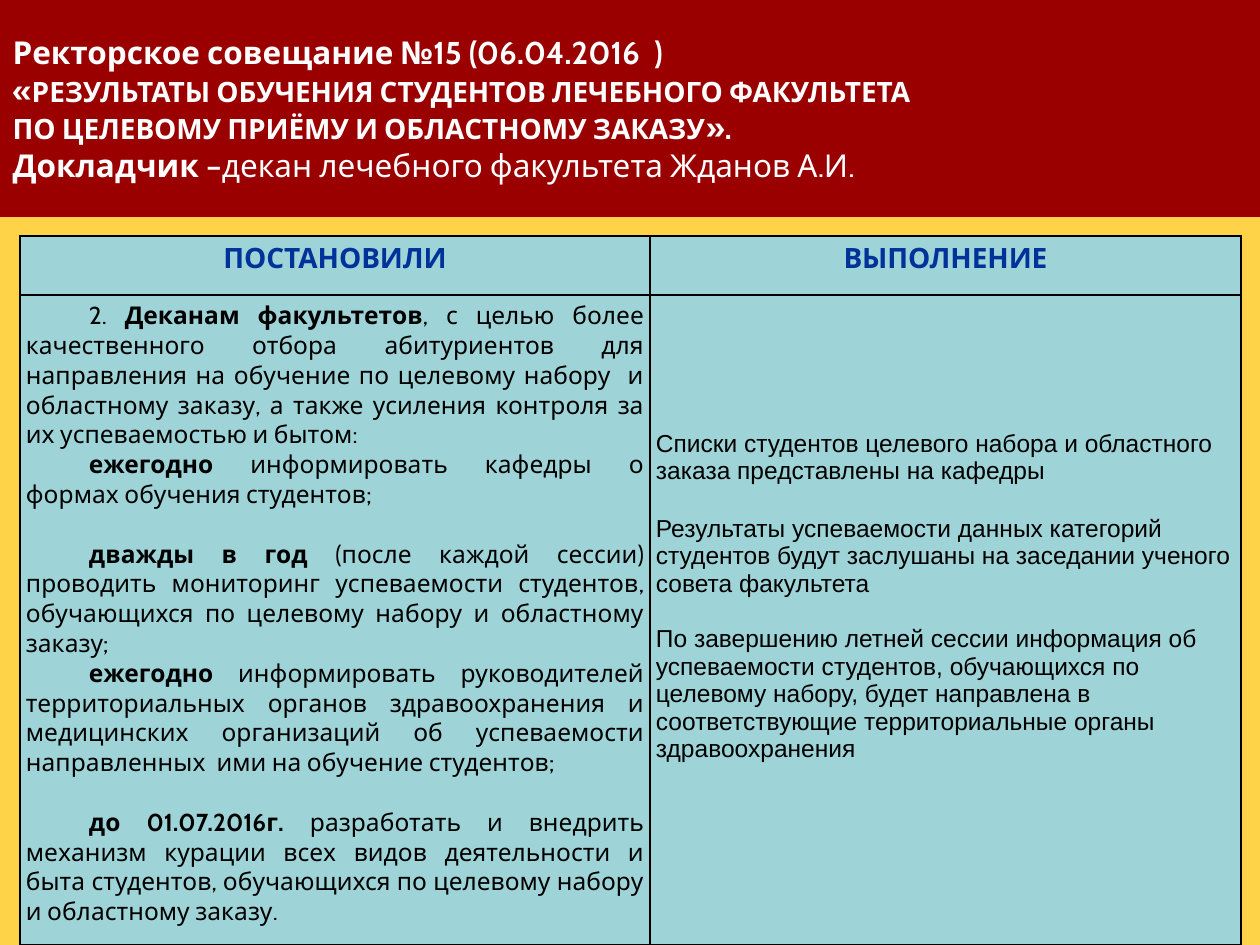
import pptx
import pptx.util
import pptx.dml.color
import pptx.enum.text
from lxml import etree

Pt = pptx.util.Pt
ALIGN = pptx.enum.text.PP_ALIGN
ANCHOR = pptx.enum.text.MSO_ANCHOR
NS = "{http://schemas.openxmlformats.org/drawingml/2006/main}"
HUES = {"back": "FFD347", "band": "9A0000", "cell": "9ED3D7",
        "head": "003399", "ink": "000000", "white": "FFFFFF"}

TITLE = [
    [("Ректорское совещание №15 (06.04.2016  )", 18, True)],
    [("«", 18, True),
     ("РЕЗУЛЬТАТЫ ОБУЧЕНИЯ СТУДЕНТОВ ЛЕЧЕБНОГО ФАКУЛЬТЕТА", 16, True)],
    [("ПО ЦЕЛЕВОМУ ПРИЁМУ И ОБЛАСТНОМУ ЗАКАЗУ", 16, True), ("».", 18, True)],
    [("Докладчик –", 18, True),
     ("декан лечебного факультета Жданов А.И.", 18, False)],
]
HEADS = ["ПОСТАНОВИЛИ", "ВЫПОЛНЕНИЕ"]
# Each task: space before in points, then (text, bold) runs
TASKS = [
    (0, [("2. ", False), ("Деканам факультетов", True),
         (", с целью более качественного отбора абитуриентов для направления "
          "на обучение по целевому набору  и областному заказу, а также "
          "усиления контроля за их успеваемостью и бытом:", False)]),
    (0, [("ежегодно ", True),
         ("информировать кафедры о формах обучения студентов;", False)]),
    (17, [("дважды в год", True),
          (" (после каждой сессии) проводить мониторинг успеваемости "
           "студентов, обучающихся по целевому набору и областному заказу;",
           False)]),
    (0, [("ежегодно", True),
         (" информировать руководителей территориальных органов "
          "здравоохранения и медицинских организаций об успеваемости "
          "направленных  ими на обучение студентов;", False)]),
    (17, [("до 01.07.2016г.", True),
          (" разработать и внедрить механизм курации всех видов деятельности "
           "и быта студентов, обучающихся по целевому набору и областному "
           "заказу.", False)]),
]
DONE = [
    (0, "Списки студентов целевого набора и областного заказа представлены "
        "на кафедры"),
    (17, "Результаты успеваемости данных категорий студентов будут заслушаны "
         "на заседании ученого совета факультета"),
    (16, "По завершению летней сессии информация об успеваемости студентов, "
         "обучающихся по целевому набору, будет направлена в соответствующие "
         "территориальные органы здравоохранения"),
]


def px(n):
    return round(n * 914400 / 126)


def rgb(name):
    return pptx.dml.color.RGBColor.from_string(HUES[name])


def assign(item, values):
    for key, value in values.items():
        setattr(item, key, value)


class Deck:
    def __init__(self):
        self.prs = pptx.Presentation()
        assign(self.prs, {"slide_width": px(1260), "slide_height": px(945)})
        self.slide = self.prs.slides.add_slide(self.prs.slide_layouts[5])
        self.paint(self.slide.background, "back")

    def paint(self, item, hue):
        item.fill.solid()
        item.fill.fore_color.rgb = rgb(hue)

    def run(self, para, text, size, bold, hue, face="Cabin"):
        run = para.add_run()
        run.text = text
        assign(run.font, {"size": Pt(size), "bold": bold, "name": face})
        run.font.color.rgb = rgb(hue)

    def title(self, lines, box):
        shape = self.slide.shapes.title
        assign(shape, dict(zip(("left", "top", "width", "height"),
                               map(px, box))))
        self.paint(shape, "band")
        frame = shape.text_frame
        assign(frame, {"word_wrap": True, "vertical_anchor": ANCHOR.MIDDLE,
                       "auto_size": pptx.enum.text.MSO_AUTO_SIZE.NONE})
        para = frame.paragraphs[0]
        para.alignment = ALIGN.LEFT
        for i, line in enumerate(lines):
            if i:
                para.add_line_break()
                size = str(lines[i - 1][-1][1] * 100)
                etree.SubElement(para._p[-1], NS + "rPr", sz=size)
            for text, size, bold in line:
                self.run(para, text, size, bold, "white")

    def table(self, left, top, cols, rows):
        frame = self.slide.shapes.add_table(
            len(rows), len(cols), px(left), px(top),
            px(sum(cols)), px(sum(rows)))
        table = frame.table
        assign(table, {"first_row": False, "horz_banding": False})
        for col, width in zip(table.columns, cols):
            col.width = px(width)
        for row, height in zip(table.rows, rows):
            row.height = px(height)
        for cell in table.iter_cells():
            for side in ("left", "right", "top", "bottom"):
                setattr(cell, "margin_" + side, px(6))
            self.edge(cell)
            self.paint(cell, "cell")
        return table

    def edge(self, cell):
        """Draw a thin line on all four sides; must precede the fill."""
        props = cell._tc.get_or_add_tcPr()
        for tag in ("lnL", "lnR", "lnT", "lnB"):
            line = etree.SubElement(props, NS + tag, w=str(Pt(1)))
            fill = etree.SubElement(line, NS + "solidFill")
            etree.SubElement(fill, NS + "srgbClr", val=HUES["ink"])

    def para(self, cell, first, align, gap=0, indent=0):
        frame = cell.text_frame
        para = frame.paragraphs[0] if first else frame.add_paragraph()
        para.alignment = align
        if gap:
            para.space_before = Pt(gap)
        if indent:
            para._p.get_or_add_pPr().set("indent", str(px(indent)))
        return para


def main():
    deck = Deck()
    deck.title(TITLE, (0, 0, 1260, 217))
    table = deck.table(20, 236, (630, 591), (59, 650))
    for i, text in enumerate(HEADS):
        para = deck.para(table.cell(0, i), True, ALIGN.CENTER)
        deck.run(para, text, 16, True, "head")
    for i, (gap, runs) in enumerate(TASKS):
        para = deck.para(table.cell(1, 0), i == 0, ALIGN.JUSTIFY, gap, 63)
        for text, bold in runs:
            deck.run(para, text, 14, bold, "ink")
    cell = table.cell(1, 1)
    cell.margin_top = px(135)
    for i, (gap, text) in enumerate(DONE):
        para = deck.para(cell, i == 0, ALIGN.LEFT, gap)
        deck.run(para, text, 14, False, "ink", "Arial")
    deck.prs.save("out.pptx")


if __name__ == "__main__":
    main()
